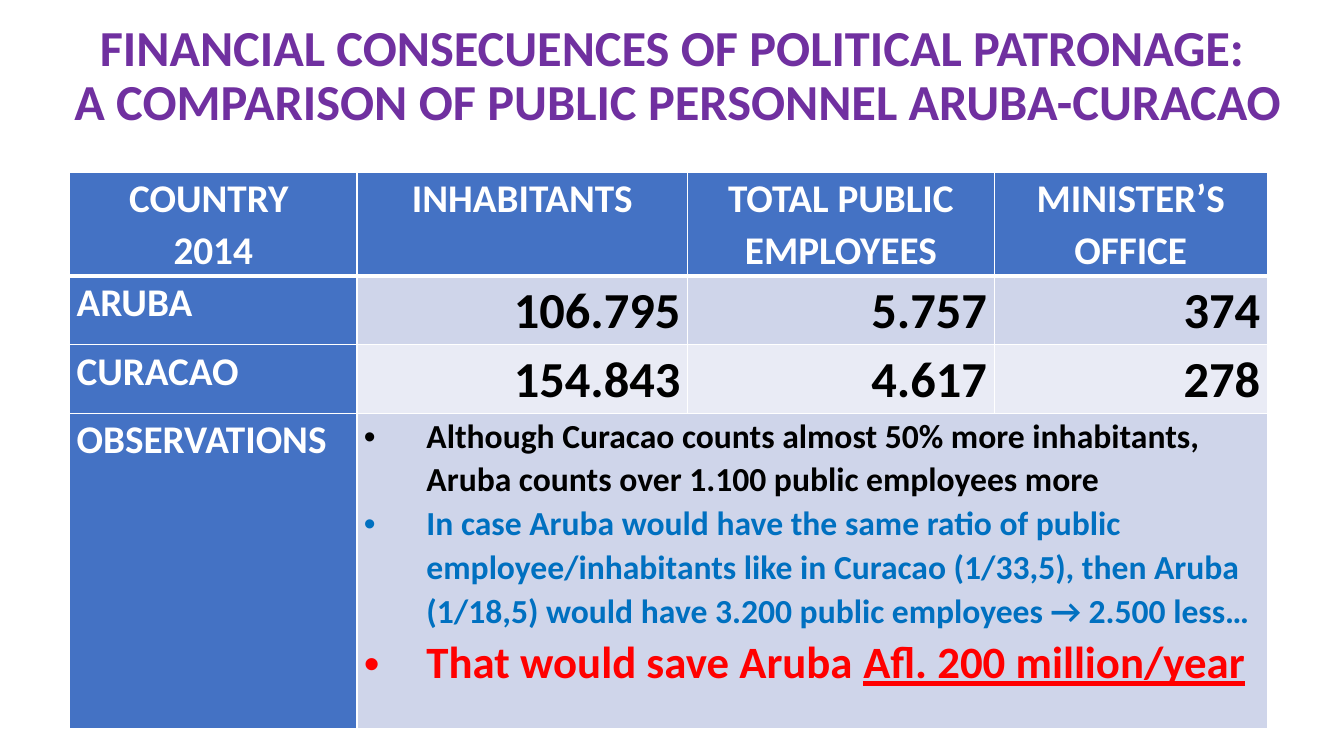
from pptx import Presentation
from pptx.dml.color import RGBColor
from pptx.enum.text import MSO_ANCHOR, PP_ALIGN
from pptx.oxml.xmlchemy import OxmlElement
from pptx.util import Pt

TITLE = ("FINANCIAL CONSECUENCES OF POLITICAL PATRONAGE: \v"
         "A COMPARISON OF PUBLIC PERSONNEL ARUBA-CURACAO")
HEADINGS = [["COUNTRY ", "2014"], ["INHABITANTS"],
            ["TOTAL PUBLIC EMPLOYEES"], ["MINISTER’S", "OFFICE"]]
COUNTRIES = [("ARUBA", "106.795", "5.757", "374"),
             ("CURACAO", "154.843", "4.617", "278")]
OBSERVATIONS_LABEL = "OBSERVATIONS"
OBSERVATIONS = [  # (style, [(text, underlined)])
    ("fact", [("Although Curacao counts almost 50% more inhabitants, "
               "Aruba counts over 1.100 public employees more", False)]),
    ("ratio", [("In case Aruba would have the same ratio of public "
                "employee/inhabitants like in Curacao (1/33,5), then Aruba "
                "(1/18,5) would have 3.200 public employees → 2.500 less…", False)]),
    ("saving", [("That would save Aruba ", False), ("Afl. 200 million/year", True)]),
]

THEME = {
    "font": "Calibri",
    "text": {  # style: (size, colour)
        "title": (36, "7030A0"), "heading": (28, "FFFFFF"), "figure": (36, "000000"),
        "fact": (24, "000000"), "ratio": (24, "0070C0"), "saving": (32, "FF0000"),
    },
    "heading_fill": "4472C4",
    "bands": ["CFD5EA", "E9EBF5"],
    "rule": "FFFFFF",
}

PX = 9144  # 100 px to the inch
SLIDE = (1333, 750)
TITLE_BOX = (60, 41, 1225, 71)
TABLE_AT = (69, 171)
COLUMNS = [285, 328, 304, 271]
ROWS = [103, 68, 68, 313]
CELL_INSET = 7
BULLET_INDENT = 62


def px(*lengths):
    return [length * PX for length in lengths]


def set_all(target, values):
    for key, value in values.items():
        setattr(target, key, value)


def add_run(paragraph, text, style, underline=False):
    size, colour = THEME["text"][style]
    # add_run().text would escape the line break, so each line is its own run
    for number, line in enumerate(text.split("\v")):
        if number:
            paragraph.add_line_break()
        run = paragraph.add_run()
        run.text = line
        set_all(run.font, {"name": THEME["font"], "size": Pt(size), "bold": True,
                           "underline": underline})
        run.font.color.rgb = RGBColor.from_string(colour)


def add_bullet(paragraph):
    properties = paragraph._p.get_or_add_pPr()
    properties.set("marL", str(BULLET_INDENT * PX))
    properties.set("indent", str(-BULLET_INDENT * PX))
    font = OxmlElement("a:buFont")
    font.set("typeface", "Arial")
    bullet = OxmlElement("a:buChar")
    bullet.set("char", "•")
    properties.extend([font, bullet])


def fill_frame(frame, lines, align, spacing=1.07, bulleted=False):
    """Write lines of (style, [(text, underlined)]), one paragraph each."""
    for number, (style, parts) in enumerate(lines):
        paragraph = frame.add_paragraph() if number else frame.paragraphs[0]
        set_all(paragraph, {"alignment": align, "line_spacing": spacing})
        if bulleted:
            add_bullet(paragraph)
        for text, underline in parts:
            add_run(paragraph, text, style, underline)


def format_cell(cell, fill, top, bottom):
    """Set insets, fill and rules; top and bottom are rule widths in points."""
    set_all(cell, {"margin_left": CELL_INSET * PX, "margin_right": CELL_INSET * PX,
                   "margin_top": 0, "margin_bottom": 0,
                   "vertical_anchor": MSO_ANCHOR.TOP})
    properties = cell._tc.get_or_add_tcPr()
    for side, width in {"L": 1, "R": 1, "T": top, "B": bottom}.items():
        rule = OxmlElement(f"a:ln{side}")
        rule.set("w", str(Pt(width)))
        solid, colour = OxmlElement("a:solidFill"), OxmlElement("a:srgbClr")
        colour.set("val", THEME["rule"])
        solid.append(colour)
        rule.append(solid)
        properties.append(rule)
    cell.fill.solid()
    cell.fill.fore_color.rgb = RGBColor.from_string(fill)


def add_title(slide):
    frame = slide.shapes.add_textbox(*px(*TITLE_BOX)).text_frame
    set_all(frame, {"word_wrap": True, "vertical_anchor": MSO_ANCHOR.MIDDLE})
    fill_frame(frame, [("title", [(TITLE, False)])], PP_ALIGN.CENTER, 0.9)


def add_comparison(slide):
    table = slide.shapes.add_table(len(ROWS), len(COLUMNS), *px(*TABLE_AT),
                                   *px(sum(COLUMNS), sum(ROWS))).table
    for column, width in zip(table.columns, px(*COLUMNS)):
        column.width = width
    for row, height in zip(table.rows, px(*ROWS)):
        row.height = height

    for r in range(len(ROWS)):
        for c in range(len(COLUMNS)):
            is_heading = r == 0 or c == 0
            fill = THEME["heading_fill"] if is_heading else THEME["bands"][(r - 1) % 2]
            format_cell(table.cell(r, c), fill, 3 if r == 1 else 1, 3 if r == 0 else 1)

    def write(r, c, style, texts, align):
        fill_frame(table.cell(r, c).text_frame,
                   [(style, [(text, False)]) for text in texts], align)

    for c, heading in enumerate(HEADINGS):
        write(0, c, "heading", heading, PP_ALIGN.CENTER)
    for r, (country, *figures) in enumerate(COUNTRIES, 1):
        write(r, 0, "heading", [country], PP_ALIGN.LEFT)
        for c, figure in enumerate(figures, 1):
            write(r, c, "figure", [figure], PP_ALIGN.RIGHT)

    last = len(ROWS) - 1
    write(last, 0, "heading", [OBSERVATIONS_LABEL], PP_ALIGN.LEFT)
    observations = table.cell(last, 1)
    observations.merge(table.cell(last, len(COLUMNS) - 1))
    fill_frame(observations.text_frame, OBSERVATIONS, PP_ALIGN.LEFT, bulleted=True)


def main():
    deck = Presentation()
    deck.slide_width, deck.slide_height = px(*SLIDE)
    slide = deck.slides.add_slide(deck.slide_layouts[6])
    add_title(slide)
    add_comparison(slide)
    deck.save("out.pptx")


if __name__ == "__main__":
    main()
